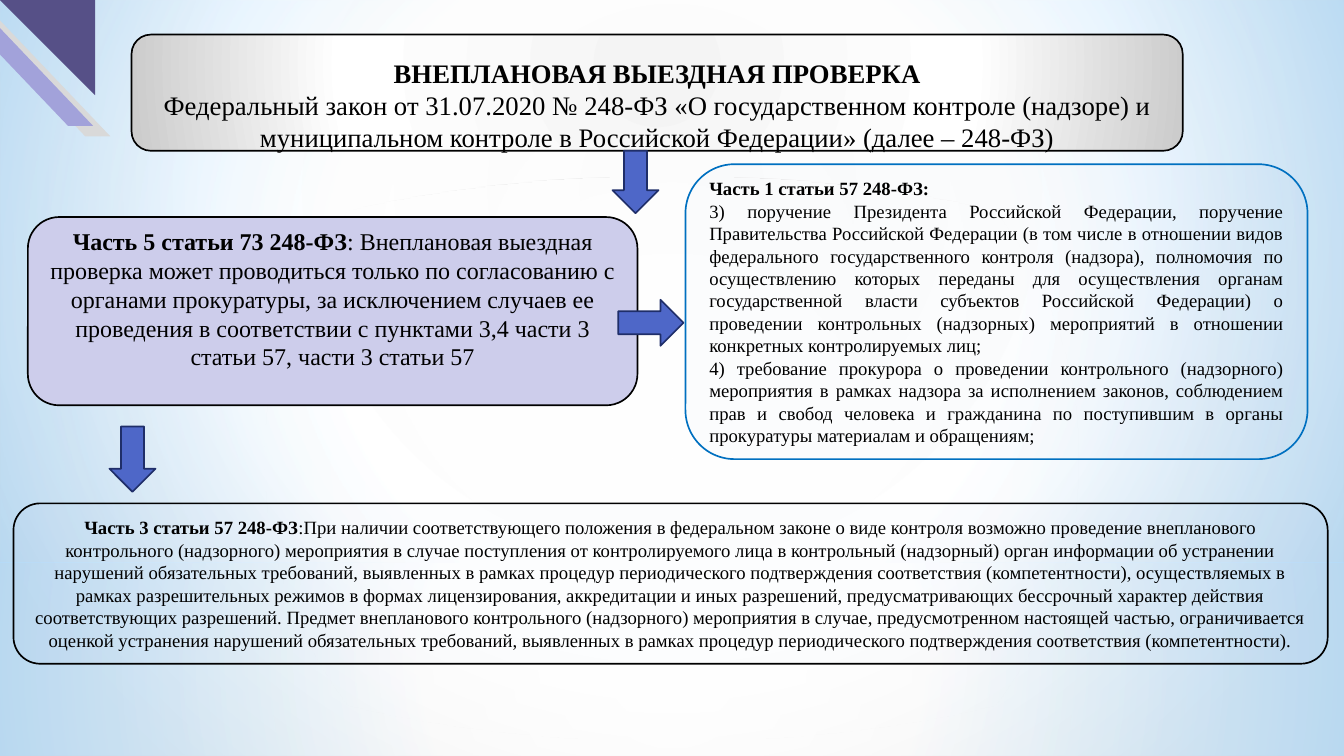
from dataclasses import dataclass

from lxml import etree
from pptx import Presentation
from pptx.dml.color import RGBColor
from pptx.enum.shapes import MSO_SHAPE
from pptx.enum.text import MSO_ANCHOR, PP_ALIGN
from pptx.oxml.ns import qn
from pptx.util import Inches, Pt

RECT, ELLIPSE = MSO_SHAPE.RECTANGLE, MSO_SHAPE.OVAL
ROUNDED, ARROW = MSO_SHAPE.ROUNDED_RECTANGLE, MSO_SHAPE.DOWN_ARROW
STRIPE, CORNER = MSO_SHAPE.PARALLELOGRAM, MSO_SHAPE.RIGHT_TRIANGLE
CENTER, LEFT, JUSTIFY = PP_ALIGN.CENTER, PP_ALIGN.LEFT, PP_ALIGN.JUSTIFY
TOP, MIDDLE = MSO_ANCHOR.TOP, MSO_ANCHOR.MIDDLE

FONT = "Times New Roman"
COLORS = {
    "black": "000000", "white": "FFFFFF", "pale": "F4F4F4", "silver": "CCCCCC",
    "sky": "B4DCFA", "gray": "D9D9D9", "lilac": "A2A2DA", "violet": "565087",
    "lavender": "CDCDEB", "blue": "4E67C8", "navy": "1F2E69",
    "periwinkle": "95A4DE", "azure": "0070C0",
}


@dataclass(frozen=True)
class Gradient:
    stops: tuple
    focus: tuple = ()


@dataclass(frozen=True)
class Figure:
    kind: int
    box: tuple
    fill: str | Gradient
    opacity: int = 100
    line: str = ""
    flips: tuple = ()
    adjustment: float | None = None
    rotation: int = 0


@dataclass(frozen=True)
class Panel:
    figure: Figure
    paragraphs: tuple
    size: int
    aligns: tuple = (CENTER,)
    anchor: int = MIDDLE
    top: float = 0.05
    bottom: float = 0.05


def set_alpha(color, opacity: int) -> None:
    if opacity < 100:
        etree.SubElement(color, qn("a:alpha"), val=str(opacity * 1000))


def apply_gradient(fill, element, gradient: Gradient) -> None:
    fill.gradient()
    node = next(element.iter(qn("a:gradFill")))
    for child in list(node):
        node.remove(child)
    stops = etree.SubElement(node, qn("a:gsLst"))
    for position, name, opacity in gradient.stops:
        stop = etree.SubElement(stops, qn("a:gs"), pos=str(position * 1000))
        set_alpha(etree.SubElement(stop, qn("a:srgbClr"), val=COLORS[name]), opacity)
    if gradient.focus:
        circle = etree.SubElement(node, qn("a:path"), {"path": "circle"})
        sides = {side: str(value * 1000) for side, value in zip("ltrb", gradient.focus)}
        etree.SubElement(circle, qn("a:fillToRect"), sides)
    else:
        etree.SubElement(node, qn("a:lin"), ang="5400000", scaled="0")


def draw_figure(slide, figure: Figure):
    shape = slide.shapes.add_shape(figure.kind, *map(Inches, figure.box))
    shape.shadow.inherit = False
    shape.rotation = figure.rotation
    if figure.adjustment is not None:
        shape.adjustments[0] = figure.adjustment
    for flip in figure.flips:
        next(shape.element.iter(qn("a:xfrm"))).set(flip, "1")
    if isinstance(figure.fill, Gradient):
        apply_gradient(shape.fill, shape.element, figure.fill)
    else:
        shape.fill.solid()
        shape.fill.fore_color.rgb = RGBColor.from_string(COLORS[figure.fill])
        set_alpha(next(shape.element.spPr.iter(qn("a:srgbClr"))), figure.opacity)
    if figure.line:
        shape.line.color.rgb = RGBColor.from_string(COLORS[figure.line])
        shape.line.width = Pt(1.25)
    else:
        shape.line.fill.background()
    return shape


def write_text(shape, paragraphs: tuple, *, size: int, aligns: tuple,
               anchor: int, top: float, bottom: float) -> None:
    frame = shape.text_frame
    frame.word_wrap = True
    frame.vertical_anchor = anchor
    frame.margin_left = frame.margin_right = Inches(0.1)
    frame.margin_top, frame.margin_bottom = Inches(top), Inches(bottom)
    for index, (heading, body) in enumerate(paragraphs):
        paragraph = frame.add_paragraph() if index else frame.paragraphs[0]
        paragraph.alignment = aligns[min(index, len(aligns) - 1)]
        for words, bold in ((heading, True), (body, False)):
            if words:
                run = paragraph.add_run()
                run.text = words
                run.font.name, run.font.size, run.font.bold = FONT, Pt(size), bold
                run.font.color.rgb = RGBColor.from_string(COLORS["black"])


def draw_panel(slide, panel: Panel) -> None:
    write_text(draw_figure(slide, panel.figure), panel.paragraphs, size=panel.size,
               aligns=panel.aligns, anchor=panel.anchor, top=panel.top,
               bottom=panel.bottom)


MIDPOINT = (50, 50, 50, 50)
PEARL = Gradient(((0, "pale", 100), (60, "white", 100), (100, "silver", 100)),
                 (20, 10, 20, 60))
LOWER_GLOW = Gradient(((0, "white", 91), (37, "white", 76), (100, "sky", 79)), MIDPOINT)
UPPER_GLOW = Gradient(((0, "white", 89), (48, "white", 62), (100, "sky", 79)), MIDPOINT)
HORIZON = Gradient(((0, "white", 0), (29, "white", 30), (45, "sky", 40),
                    (55, "white", 26), (65, "sky", 60), (100, "white", 0)))
HALO = Gradient(((0, "white", 100), (56, "white", 0)), MIDPOINT)

BACKDROP = (
    Figure(RECT, (0, 5.86, 14, 2.01), LOWER_GLOW),
    Figure(RECT, (0, 0, 14, 5.86), UPPER_GLOW),
    Figure(RECT, (0, 4.33, 14, 2.62), HORIZON),
    Figure(ELLIPSE, (0, 1.84, 14, 5.86), HALO),
    Figure(STRIPE, (-0.36, 0.11, 1.51, 1.31), "gray", flips=("flipH",), adjustment=0.953),
    Figure(STRIPE, (-0.54, 0, 1.51, 1.31), "lilac", flips=("flipH",), adjustment=0.953),
    Figure(CORNER, (0, 0, 0.99, 0.99), "violet", flips=("flipH", "flipV")),
)

PART_3_SENTENCES = (
    ":При наличии соответствующего положения в федеральном законе о виде контроля возможно проведение внепланового контрольного (надзорного) мероприятия в случае поступления от контролируемого лица в контрольный (надзорный) орган информации об устранении нарушений обязательных требований, выявленных в рамках процедур периодического подтверждения соответствия (компетентности), осуществляемых в рамках разрешительных режимов в формах лицензирования, аккредитации и иных разрешений, предусматривающих бессрочный характер действия соответствующих разрешений.",
    "Предмет внепланового контрольного (надзорного) мероприятия в случае, предусмотренном настоящей частью, ограничивается оценкой устранения нарушений обязательных требований, выявленных в рамках процедур периодического подтверждения соответствия (компетентности).",
)

PANELS = (
    Panel(Figure(ROUNDED, (0.29, 2.26, 6.35, 1.96), "lavender", line="black"), (
        ("Часть 5 статьи 73 248-ФЗ", ": Внеплановая выездная проверка может проводиться только по согласованию с органами прокуратуры, за исключением случаев ее проведения в соответствии с пунктами 3,4 части 3 статьи 57, части 3 статьи 57"),
    ), 18, bottom=0.31),
    Panel(Figure(ROUNDED, (7.14, 1.71, 6.48, 3.07), "periwinkle", 2, "azure"), (
        ("Часть 1 статьи 57 248-ФЗ:", ""),
        ("", "3) поручение Президента Российской Федерации, поручение Правительства Российской Федерации (в том числе в отношении видов федерального государственного контроля (надзора), полномочия по осуществлению которых переданы для осуществления органам государственной власти субъектов Российской Федерации) о проведении контрольных (надзорных) мероприятий в отношении конкретных контролируемых лиц;"),
        ("", "4) требование прокурора о проведении контрольного (надзорного) мероприятия в рамках надзора за исполнением законов, соблюдением прав и свобод человека и гражданина по поступившим в органы прокуратуры материалам и обращениям;"),
    ), 14, aligns=(LEFT, JUSTIFY)),
    Panel(Figure(ROUNDED, (1.37, 0.36, 10.95, 1.21), PEARL, line="black"), (
        ("ВНЕПЛАНОВАЯ ВЫЕЗДНАЯ ПРОВЕРКА", ""),
        ("", "Федеральный закон от 31.07.2020 № 248-ФЗ «О государственном контроле (надзоре) и муниципальном контроле в Российской Федерации» (далее – 248-ФЗ)"),
    ), 20, anchor=TOP, top=0.17),
    Panel(Figure(ROUNDED, (0.14, 5.24, 13.69, 1.67), "periwinkle", 2, "black"), (
        ("Часть 3 статьи 57 248-ФЗ", " ".join(PART_3_SENTENCES)),
    ), 14),
)

ARROWS = tuple(
    Figure(ARROW, (left, top, 0.48, height), "blue", line="navy", rotation=rotation)
    for left, top, height, rotation in (
        (6.54, 3.02, 0.68, 270), (6.38, 1.57, 0.65, 0), (1.14, 4.44, 0.68, 0))
)


def main() -> None:
    deck = Presentation()
    deck.slide_width, deck.slide_height = Inches(14), Inches(7.87)
    slide = deck.slides.add_slide(deck.slide_layouts[6])
    apply_gradient(slide.background.fill, slide.element, PEARL)
    for figure in BACKDROP:
        draw_figure(slide, figure)
    for panel in PANELS:
        draw_panel(slide, panel)
    for arrow in ARROWS:
        draw_figure(slide, arrow)
    deck.save("out.pptx")


if __name__ == "__main__":
    main()
